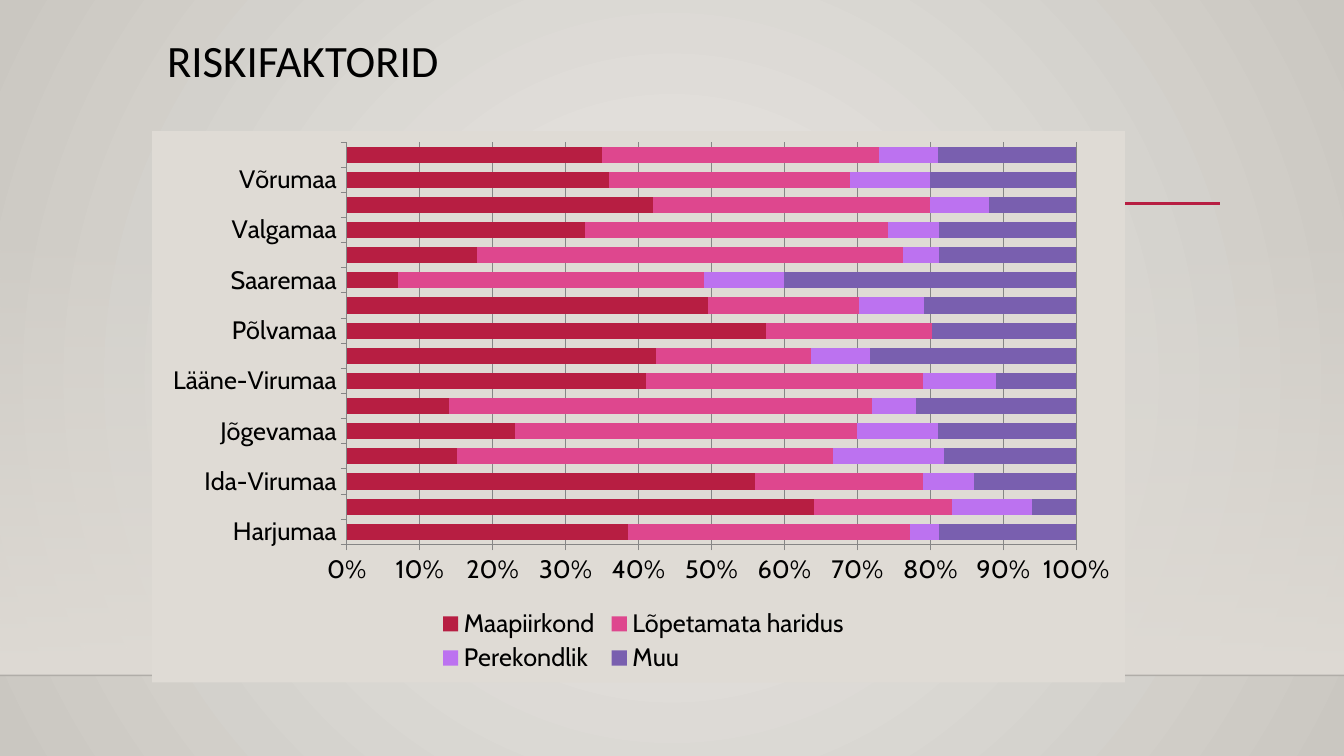
import pptx
import pptx.util
import pptx.oxml
import pptx.oxml.ns
import pptx.chart.data
import pptx.dml.color
import pptx.enum.chart
import pptx.enum.shapes
import pptx.enum.text

Pt = pptx.util.Pt
RGBColor = pptx.dml.color.RGBColor
qn = pptx.oxml.ns.qn

TITLE = "RISKIFAKTORID"
COUNTIES = ["Harjumaa", "Hiiumaa", "Ida-Virumaa", "Järvamaa", "Jõgevamaa", "Läänemaa",
            "Lääne-Virumaa", "Pärnumaa", "Põlvamaa", "Raplamaa", "Saaremaa", "Tartumaa",
            "Valgamaa", "Viljandimaa", "Võrumaa", "Kokku:"]

BLACK = RGBColor(0x00, 0x00, 0x00)
CRIMSON = RGBColor(0xB7, 0x1E, 0x42)
PINK = RGBColor(0xDE, 0x47, 0x8E)
LILAC = RGBColor(0xBC, 0x72, 0xF0)
VIOLET = RGBColor(0x79, 0x5F, 0xAF)
GRID_GREY = RGBColor(0x86, 0x86, 0x86)
SAND = RGBColor(0xDF, 0xDB, 0xD5)
PALE = RGBColor(0xEC, 0xEA, 0xE7)
STONE = RGBColor(0xCA, 0xC7, 0xC1)

RISKS = [
    ("Maapiirkond", CRIMSON,
     [39, 64, 56, 15, 23, 14, 41, 42, 58, 50, 7, 18, 33, 42, 36, 35]),
    ("Lõpetamata haridus", PINK,
     [39, 19, 23, 51, 47, 58, 38, 21, 23, 21, 42, 59, 42, 38, 33, 38]),
    ("Perekondlik", LILAC,
     [4, 11, 7, 15, 11, 6, 10, 8, 0, 9, 11, 5, 7, 8, 11, 8]),
    ("Muu", VIOLET,
     [19, 6, 14, 18, 19, 22, 11, 28, 20, 21, 40, 19, 19, 12, 20, 19]),
]

WIDTH, HEIGHT = 960, 540
WALL_TOP, FLOOR = 159, 482.4
TITLE_BOX = (112.3, 23.8, 756, 82.8)
CHART_BOX = (108.7, 93.6, 694.8, 393.8)
PLOT_SHARE = (0.2, 0.02, 0.75, 0.73)
LEGEND_SHARE = (0.29, 0.86, 0.43, 0.13)
CIRCLE = ('<a:path path="circle"><a:fillToRect l="50000" t="50000" r="50000" b="50000"/>'
          '</a:path>')
DOWNWARD = '<a:lin ang="5400000" scaled="0"/>'
A = pptx.oxml.ns.nsdecls("a")
C = pptx.oxml.ns.nsdecls("c")


def points(lengths):
    return [Pt(length) for length in lengths]


def apply(target, settings):
    for name, value in settings.items():
        setattr(target, name, value)


def set_gradient(fill, element, stops, direction):
    """Give a fill a gradient from (percent, colour, opacity) stops."""
    fill.gradient()
    marks = "".join(
        f'<a:gs pos="{place * 1000}"><a:srgbClr val="{colour}">'
        f'<a:alpha val="{opacity * 1000}"/></a:srgbClr></a:gs>'
        for place, colour, opacity in stops)
    old = next(element.iter(qn("a:gradFill")))
    old.getparent().replace(old, pptx.oxml.parse_xml(
        f'<a:gradFill {A} rotWithShape="1"><a:gsLst>{marks}</a:gsLst>{direction}</a:gradFill>'))


def add_rule(slide, left, right, height, colour, weight, opacity=100):
    rule = slide.shapes.add_connector(
        pptx.enum.shapes.MSO_CONNECTOR.STRAIGHT, *points((left, height, right, height)))
    rule.line.color.rgb = colour
    rule.line.width = Pt(weight)
    tint = next(rule._element.iter(qn("a:srgbClr")))
    tint.append(pptx.oxml.parse_xml(f'<a:alpha {A} val="{opacity * 1000}"/>'))
    rule._element.spPr.append(pptx.oxml.parse_xml(f"<a:effectLst {A}/>"))


def layout_xml(share, inner=False):
    target = '<c:layoutTarget val="inner"/>' if inner else ""
    modes = "".join(f'<c:{side}Mode val="edge"/>' for side in "xy")
    sizes = "".join(f'<c:{side} val="{value}"/>' for side, value in zip("xywh", share))
    return pptx.oxml.parse_xml(
        f"<c:layout {C}><c:manualLayout>{target}{modes}{sizes}</c:manualLayout></c:layout>")


def add_backdrop(slide):
    set_gradient(slide.background.fill, slide._element,
                 [(0, PALE, 100), (100, STONE, 100)], CIRCLE)
    wall = slide.shapes.add_shape(
        pptx.enum.shapes.MSO_SHAPE.RECTANGLE,
        *points((0, WALL_TOP, WIDTH, FLOOR - WALL_TOP)))
    wall.shadow.inherit = False
    wall.line.fill.background()
    set_gradient(wall.fill, wall._element, [(0, SAND, 0), (100, SAND, 100)], DOWNWARD)
    add_rule(slide, 0, WIDTH, FLOOR, BLACK, 1, 20)
    add_rule(slide, 114.5, 871.2, 145.4, CRIMSON, 2.5)


def add_title(slide):
    frame = slide.shapes.add_textbox(*points(TITLE_BOX)).text_frame
    apply(frame, {"word_wrap": True, "vertical_anchor": pptx.enum.text.MSO_ANCHOR.TOP})
    para = frame.paragraphs[0]
    para.line_spacing = 0.9
    span = para.add_run()
    span.text = TITLE
    apply(span.font, {"size": Pt(32), "name": "Calibri"})
    span.font.color.rgb = BLACK


def add_risk_chart(slide):
    data = pptx.chart.data.CategoryChartData(number_format="0")
    data.categories = COUNTIES
    for name, _, values in RISKS:
        data.add_series(name, values)
    chart = slide.shapes.add_chart(
        pptx.enum.chart.XL_CHART_TYPE.BAR_STACKED_100, *points(CHART_BOX), data).chart
    apply(chart, {"has_title": False, "has_legend": True})
    apply(chart.font, {"size": Pt(18), "name": "Cabin"})
    chart.font.color.rgb = BLACK

    plot = chart.plots[0]
    apply(plot, {"gap_width": 57, "overlap": 100, "vary_by_categories": False})
    for series, (_, colour, _) in zip(plot.series, RISKS):
        series.format.fill.solid()
        series.format.fill.fore_color.rgb = colour

    values, counties = chart.value_axis, chart.category_axis
    outside = pptx.enum.chart.XL_TICK_MARK.OUTSIDE
    apply(values, {"has_major_gridlines": True, "major_tick_mark": outside,
                   "minimum_scale": 0, "maximum_scale": 1, "major_unit": 0.1})
    apply(values.tick_labels, {"number_format": "0%", "number_format_is_linked": False})
    apply(counties, {"has_major_gridlines": False, "major_tick_mark": outside})
    for part in (values, counties, values.major_gridlines):
        part.format.line.color.rgb = GRID_GREY
        part.format.line.width = Pt(0.75)

    legend = chart.legend
    apply(legend, {"position": pptx.enum.chart.XL_LEGEND_POSITION.BOTTOM,
                   "include_in_layout": False})
    space = chart._chartSpace
    area = next(space.iter(qn("c:plotArea")))
    for holder in (area, legend._element):
        for old in holder.findall(qn("c:layout")):
            holder.remove(old)
    area.insert(0, layout_xml(PLOT_SHARE, inner=True))
    legend._element.find(qn("c:legendPos")).addnext(layout_xml(LEGEND_SHARE))
    space.find(qn("c:chart")).addnext(pptx.oxml.parse_xml(
        f'<c:spPr {C} {A}><a:solidFill><a:srgbClr val="{SAND}"/></a:solidFill>'
        "<a:ln><a:noFill/></a:ln></c:spPr>"))


def main():
    deck = pptx.Presentation()
    apply(deck, {"slide_width": Pt(WIDTH), "slide_height": Pt(HEIGHT)})
    page = deck.slides.add_slide(deck.slide_layouts[6])
    add_backdrop(page)
    add_title(page)
    add_risk_chart(page)
    deck.save("out.pptx")


if __name__ == "__main__":
    main()
